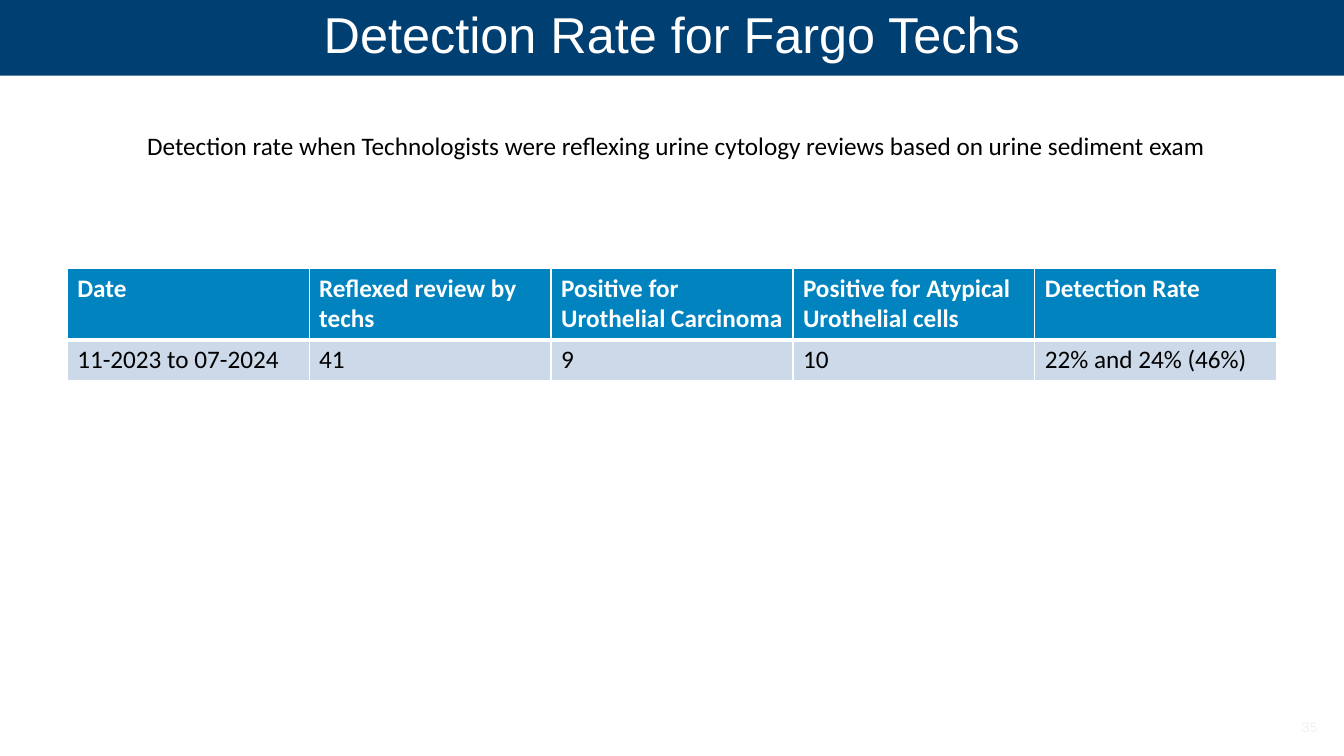
import pptx
import pptx.util
import pptx.dml.color
import pptx.enum.shapes
import pptx.enum.text
import pptx.oxml.ns
import lxml.etree

Pt = pptx.util.Pt
ALIGN = pptx.enum.text.PP_ALIGN
ANCHOR = pptx.enum.text.MSO_ANCHOR

HEADINGS = [
    "Date",
    "Reflexed review by techs",
    "Positive for Urothelial Carcinoma",
    "Positive for Atypical Urothelial cells",
    "Detection Rate",
]
RESULTS = ["11-2023 to 07-2024", "41", "9", "10", "22% and 24% (46%)"]


def color(value):
    return pptx.dml.color.RGBColor.from_string(value)


def write(frame, text, size, font, ink, bold=False, align=ALIGN.LEFT):
    frame.text = text
    frame.word_wrap = True
    para = frame.paragraphs[0]
    para.alignment = align
    for span in para.runs:
        span.font.size = Pt(size)
        span.font.name = font
        span.font.bold = bold
        span.font.color.rgb = color(ink)


def add_title(page, left, top, width, height):
    band = page.shapes.add_shape(
        pptx.enum.shapes.MSO_SHAPE.RECTANGLE,
        Pt(left), Pt(top), Pt(width), Pt(height))
    band.shadow.inherit = False
    band.fill.solid()
    band.fill.fore_color.rgb = color("003F72")
    band.line.fill.background()
    band.text_frame.vertical_anchor = ANCHOR.MIDDLE
    write(band.text_frame, "Detection Rate for Fargo Techs", 36, "Arial",
          "FFFFFF", align=ALIGN.CENTER)


def add_text(page, left, top, width, height, *style, **options):
    box = page.shapes.add_textbox(Pt(left), Pt(top), Pt(width), Pt(height))
    write(box.text_frame, *style, **options)


def add_borders(cell, widths):
    properties = cell._tc.get_or_add_tcPr()
    for side, width in zip("LRTB", widths):
        line = lxml.etree.SubElement(
            properties, pptx.oxml.ns.qn("a:ln" + side), w=str(Pt(width)))
        fill = lxml.etree.SubElement(line, pptx.oxml.ns.qn("a:solidFill"))
        lxml.etree.SubElement(fill, pptx.oxml.ns.qn("a:srgbClr"), val="FFFFFF")


def add_results(page, left, top, width, heights):
    rows = [
        (HEADINGS, "0083BE", "FFFFFF", True, (1, 1, 1, 3)),
        (RESULTS, "CCD9E8", "000000", False, (1, 1, 3, 1)),
    ]
    table = page.shapes.add_table(
        len(rows), len(HEADINGS),
        Pt(left), Pt(top), Pt(width), Pt(sum(heights))).table
    for column in table.columns:
        column.width = Pt(width / len(HEADINGS))
    for index, (texts, fill, ink, bold, borders) in enumerate(rows):
        table.rows[index].height = Pt(heights[index])
        for cell, text in zip(table.rows[index].cells, texts):
            add_borders(cell, borders)
            cell.fill.solid()
            cell.fill.fore_color.rgb = color(fill)
            write(cell.text_frame, text, 18, "Calibri", ink, bold)


def main():
    deck = pptx.Presentation()
    deck.slide_width, deck.slide_height = Pt(960), Pt(540)
    page = deck.slides.add_slide(deck.slide_layouts[6])
    add_title(page, 0, -6, 960, 60)
    add_results(page, 48, 191.5, 864, [50.4, 29.2])
    add_text(page, 98, 89.5, 785, 29,
             "Detection rate when Technologists were reflexing urine cytology "
             "reviews based on urine sediment exam", 18, "Calibri", "000000")
    add_text(page, 888, 509.5, 60, 20, "35", 10, "Arial", "F2F2F2",
             align=ALIGN.RIGHT)
    deck.save("out.pptx")


if __name__ == "__main__":
    main()
